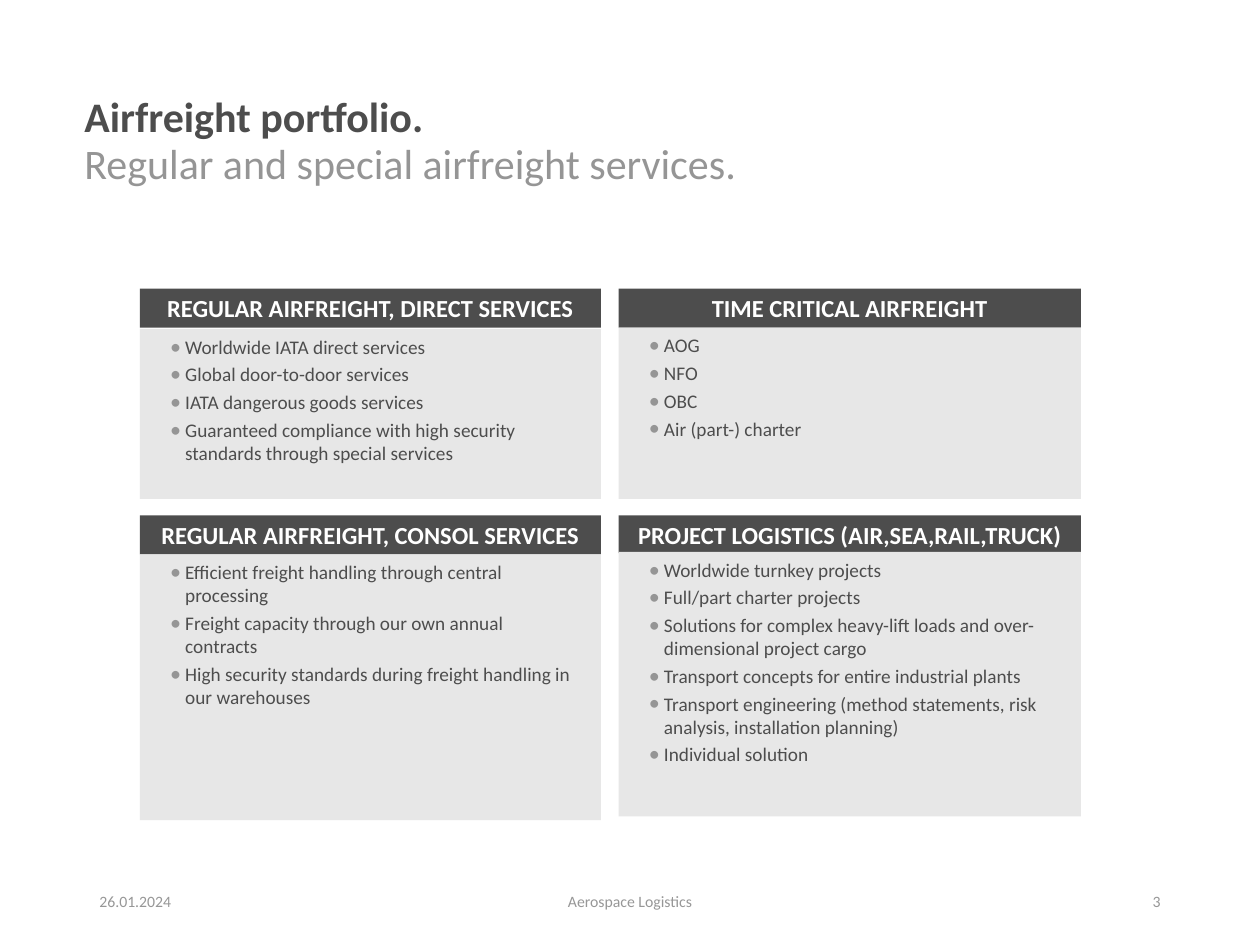
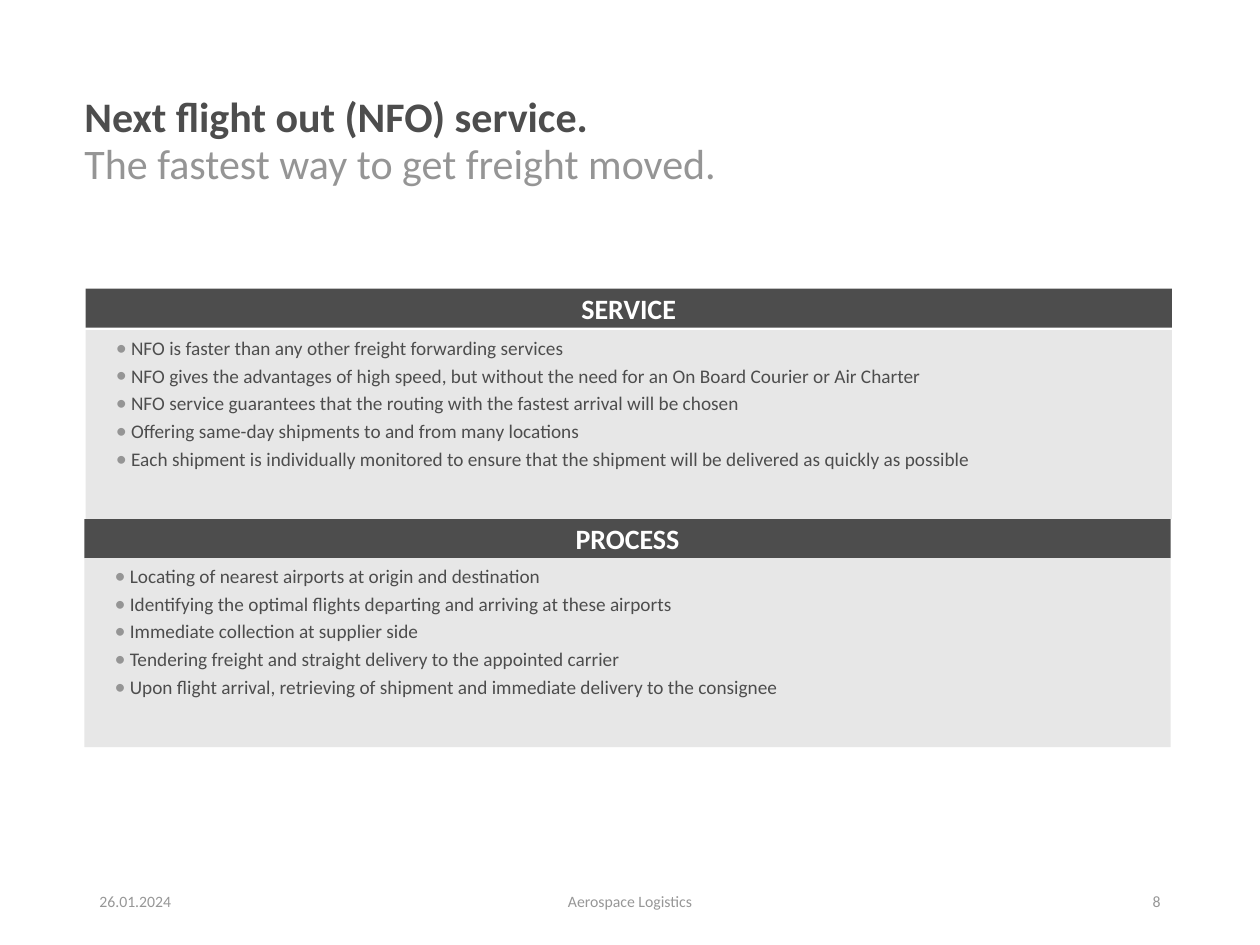
import dataclasses

import lxml.etree
import pptx
import pptx.dml.color
import pptx.enum.shapes
import pptx.enum.text
import pptx.oxml.ns
import pptx.util

Inches = pptx.util.Inches
Pt = pptx.util.Pt
ALIGN = pptx.enum.text.PP_ALIGN
ANCHOR = pptx.enum.text.MSO_ANCHOR


@dataclasses.dataclass(frozen=True)
class Theme:
    font: str = "Calibri"
    dark: str = "4D4D4D"
    grey: str = "959595"
    panel: str = "E7E7E7"
    white: str = "FFFFFF"
    footer: str = "979797"
    title_size: int = 24
    list_size: int = 11
    footer_size: int = 9


theme = Theme()


def write(frame, lines, size, color, bold=False, align=ALIGN.LEFT,
          anchor=ANCHOR.MIDDLE, insets=(0.1, 0.05)):
    """Fill a text frame and format every run alike."""
    frame.text = "\n".join(lines)
    frame.word_wrap = True
    frame.auto_size = pptx.enum.text.MSO_AUTO_SIZE.NONE
    frame.vertical_anchor = anchor
    frame.margin_left = frame.margin_right = Inches(insets[0])
    frame.margin_top = frame.margin_bottom = Inches(insets[1])
    for paragraph in frame.paragraphs:
        paragraph.alignment = align
        paragraph.space_before = Pt(0)
        for run in paragraph.runs:
            run.font.name = theme.font
            run.font.size = Pt(size)
            run.font.bold = bold
            run.font.color.rgb = pptx.dml.color.RGBColor.from_string(color)


def add_block(slide, left, top, width, height, fill):
    """Add a plain filled rectangle and return its text frame."""
    block = slide.shapes.add_shape(
        pptx.enum.shapes.MSO_SHAPE.RECTANGLE,
        Inches(left), Inches(top), Inches(width), Inches(height))
    block.shadow.inherit = False
    block.fill.solid()
    block.fill.fore_color.rgb = pptx.dml.color.RGBColor.from_string(fill)
    block.line.fill.background()
    return block.text_frame


# Content: each panel has left, width, band top and height, list top and height
pages = [
    {
        "title": "Airfreight portfolio.",
        "subtitle": "Regular and special airfreight services.",
        "number": "3",
        "heading_size": 14,
        "panels": [
            ("REGULAR AIRFREIGHT, DIRECT SERVICES",
             (1.11, 3.66, 2.29, 0.31, 2.61, 1.35),
             ["Worldwide IATA direct services",
              "Global door-to-door services",
              "IATA dangerous goods services",
              "Guaranteed compliance with high security standards through special services"]),
            ("REGULAR AIRFREIGHT, CONSOL SERVICES",
             (1.11, 3.66, 4.09, 0.31, 4.4, 2.11),
             ["Efficient freight handling through central processing",
              "Freight capacity through our own annual contracts",
              "High security standards during freight handling in our warehouses"]),
            ("TIME CRITICAL AIRFREIGHT",
             (4.91, 3.67, 2.29, 0.31, 2.6, 1.36),
             ["AOG", "NFO", "OBC", "Air (part-) charter"]),
            ("PROJECT LOGISTICS (AIR,SEA,RAIL,TRUCK)",
             (4.91, 3.67, 4.09, 0.3, 4.38, 2.1),
             ["Worldwide turnkey projects",
              "Full/part charter projects",
              "Solutions for complex heavy-lift loads and over-dimensional project cargo",
              "Transport concepts for entire industrial plants",
              "Transport engineering (method statements, risk analysis, installation planning)",
              "Individual solution"]),
        ],
    },
    {
        "title": "Next flight out (NFO) service.",
        "subtitle": "The fastest way to get freight moved.",
        "number": "8",
        "heading_size": 16,
        "panels": [
            ("SERVICE",
             (0.68, 8.62, 2.29, 0.31, 2.62, 1.5),
             ["NFO is faster than any other freight forwarding services",
              "NFO gives the advantages of high speed, but without the need for an "
              "On Board Courier or Air Charter",
              "NFO service guarantees that the routing with the fastest arrival will be chosen",
              "Offering same-day shipments to and from many locations",
              "Each shipment is individually monitored to ensure that the shipment "
              "will be delivered as quickly as possible"]),
            ("PROCESS",
             (0.67, 8.62, 4.12, 0.31, 4.43, 1.5),
             ["Locating of nearest airports at origin and destination",
              "Identifying the optimal flights departing and arriving at these airports",
              "Immediate collection at supplier side",
              "Tendering freight and straight delivery to the appointed carrier",
              "Upon flight arrival, retrieving of shipment and immediate delivery "
              "to the consignee"]),
        ],
    },
]

deck = pptx.Presentation()
deck.slide_width = Inches(10)
deck.slide_height = Inches(7.5)

for page in pages:
    slide = deck.slides.add_slide(deck.slide_layouts[0])

    # Title and subtitle
    headings = [
        (slide.shapes.title, page["title"], 0.77, 0.35, theme.dark, True),
        (slide.placeholders[1], page["subtitle"], 1.13, 0.36, theme.grey, False),
    ]
    for heading, wording, top, height, color, bold in headings:
        heading.left, heading.top = Inches(0.67), Inches(top)
        heading.width, heading.height = Inches(7.48), Inches(height)
        write(heading.text_frame, [wording], theme.title_size, color, bold,
              anchor=ANCHOR.BOTTOM, insets=(0, 0))

    # Panels: dark heading band above a bulleted list
    for name, bounds, services in page["panels"]:
        left, width, band_top, band_height, list_top, list_height = bounds
        band = add_block(slide, left, band_top, width, band_height, theme.dark)
        write(band, [name], page["heading_size"], theme.white, True, ALIGN.CENTER)

        service_list = add_block(slide, left, list_top, width, list_height, theme.panel)
        write(service_list, services, theme.list_size, theme.dark,
              anchor=ANCHOR.TOP, insets=(0.24, 0.05))
        for service in service_list.paragraphs:
            service.space_after = Pt(2.6)
            properties = service._p.get_or_add_pPr()
            properties.set("marL", str(Inches(0.12)))
            properties.set("indent", str(-Inches(0.12)))
            bullet_color = lxml.etree.SubElement(properties, pptx.oxml.ns.qn("a:buClr"))
            lxml.etree.SubElement(bullet_color, pptx.oxml.ns.qn("a:srgbClr"), val=theme.grey)
            lxml.etree.SubElement(properties, pptx.oxml.ns.qn("a:buSzPct"), val="115000")
            lxml.etree.SubElement(properties, pptx.oxml.ns.qn("a:buFont"), typeface=theme.font)
            lxml.etree.SubElement(properties, pptx.oxml.ns.qn("a:buChar"), char="•")

    # Footer: date, topic, page number
    footer = [
        ("26.01.2024", 0.69, 2.25, ALIGN.LEFT),
        ("Aerospace Logistics", 3.31, 3.38, ALIGN.CENTER),
        (page["number"], 7.06, 2.25, ALIGN.RIGHT),
    ]
    for wording, left, width, align in footer:
        note = slide.shapes.add_textbox(Inches(left), Inches(6.95), Inches(width), Inches(0.4))
        write(note.text_frame, [wording], theme.footer_size, theme.footer, align=align)

deck.save("out.pptx")
